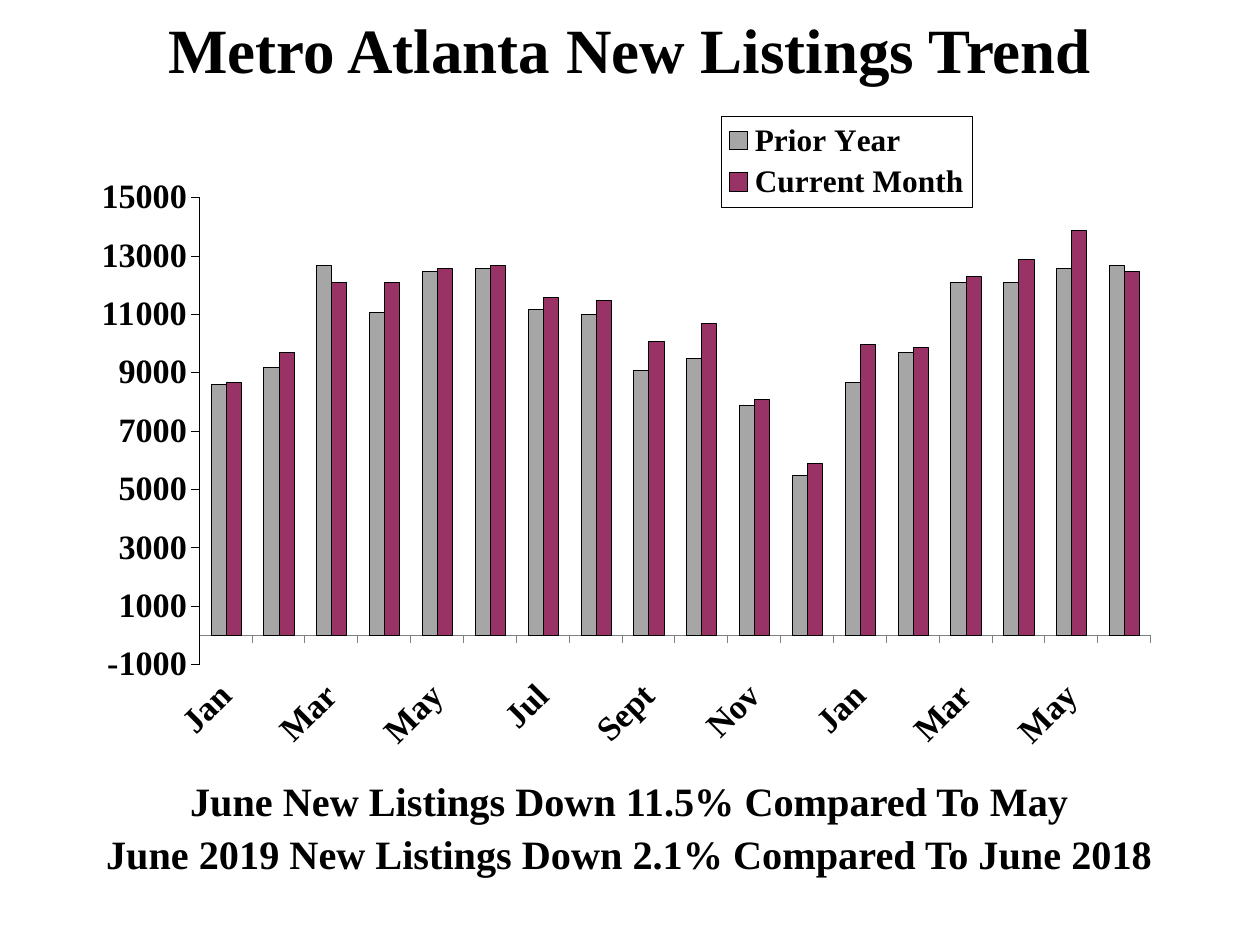
from pptx import Presentation
from pptx import util as u
from pptx.chart.data import CategoryChartData
from pptx.dml.color import RGBColor
from pptx.enum import chart as ch, text
from pptx.oxml import parse_xml
from pptx.oxml.ns import nsdecls, qn

FACE = "Times New Roman"


def style(font, size, color="000000"):
    font.name, font.size, font.bold = FACE, u.Pt(size), True
    font.color.rgb = RGBColor.from_string(color)


def layout(x, y, w, h, inner=False):
    """Manual chart layout, in fractions of the chart's size."""
    target = '<c:layoutTarget val="inner"/>' if inner else ""
    return parse_xml(
        f'<c:layout {nsdecls("c")}><c:manualLayout>{target}'
        '<c:xMode val="edge"/><c:yMode val="edge"/>'
        f'<c:x val="{x}"/><c:y val="{y}"/><c:w val="{w}"/><c:h val="{h}"/>'
        '</c:manualLayout></c:layout>')


prs = Presentation()
prs.slide_width, prs.slide_height = u.Cm(25.4), u.Cm(19.05)
slide = prs.slides.add_slide(prs.slide_layouts[5])

# Title
title = slide.shapes.title
title.left, title.top, title.width, title.height = u.Cm(0), u.Cm(0.43), u.Cm(25.4), u.Cm(1.07)
frame = title.text_frame
frame.text = "Metro Atlanta New Listings Trend"
frame.vertical_anchor = text.MSO_ANCHOR.MIDDLE
frame.paragraphs[0].alignment = text.PP_ALIGN.CENTER
style(frame.paragraphs[0].runs[0].font, 36)

# Chart
months = ["Jan", "Feb", "Mar", "Apr", "May", "Jun",
          "Jul", "Aug", "Sept", "Oct", "Nov", "Dec"]
rows = [
    ("Prior Year", "A6A6A6",
     [8600, 9200, 12700, 11100, 12500, 12600, 11200, 11000, 9100,
      9500, 7900, 5500, 8700, 9700, 12100, 12100, 12600, 12700]),
    ("Current Month", "993366",
     [8700, 9700, 12100, 12100, 12600, 12700, 11600, 11500, 10100,
      10700, 8100, 5900, 10000, 9900, 12300, 12900, 13900, 12500]),
]
data = CategoryChartData()
data.categories = months + months[:6]
for name, _, vals in rows:
    data.add_series(name, vals)
chart = slide.shapes.add_chart(
    ch.XL_CHART_TYPE.COLUMN_CLUSTERED,
    u.Cm(1.57), u.Cm(2.11), u.Cm(22.25), u.Cm(13.41), data).chart
chart.has_title = False
style(chart.font, 19.5)

plot = chart.plots[0]
plot.gap_width, plot.overlap, plot.vary_by_categories = 150, 0, False
for series, (_, color, _) in zip(plot.series, rows):
    series.invert_if_negative = False
    series.format.fill.solid()
    series.format.fill.fore_color.rgb = RGBColor.from_string(color)
    series.format.line.color.rgb = RGBColor.from_string("000000")
    series.format.line.width = u.Pt(0.03)

area = chart._chartSpace.chart.plotArea
for old in area.findall(qn("c:layout")):
    area.remove(old)
area.insert(0, layout(0.11, 0.14, 0.862, 0.702, inner=True))

# Axes
val, cat = chart.value_axis, chart.category_axis
val.minimum_scale, val.maximum_scale, val.major_unit = -1000, 15000, 2000
val.has_major_gridlines = False
for axis, color in ((val, "000000"), (cat, "808080")):
    axis.major_tick_mark = ch.XL_TICK_MARK.OUTSIDE
    axis.format.line.color.rgb = RGBColor.from_string(color)
    axis.format.line.width = u.Pt(0.01)
    style(axis.tick_labels.font, 19.5)
cat.tick_label_position = ch.XL_TICK_LABEL_POSITION.LOW
cat._element.find(qn("c:txPr")).find(qn("a:bodyPr")).set("rot", "-2700000")
for tag, step in (("tickLblSkip", 2), ("tickMarkSkip", 1)):
    skip = parse_xml(f'<c:{tag} {nsdecls("c")} val="{step}"/>')
    cat._element.find(qn("c:noMultiLvlLbl")).addprevious(skip)

# Legend
chart.has_legend = True
legend = chart.legend
legend.position = ch.XL_LEGEND_POSITION.RIGHT
legend.include_in_layout = False
style(legend.font, 17.9)
box = legend._element
for old in box.findall(qn("c:layout")):
    box.remove(old)
box.find(qn("c:legendPos")).addnext(layout(0.583, 0.017, 0.227, 0.137))
box.find(qn("c:txPr")).addprevious(parse_xml(
    f'<c:spPr {nsdecls("c", "a")}><a:solidFill><a:srgbClr val="FFFFFF"/></a:solidFill>'
    '<a:ln w="3175"><a:solidFill><a:srgbClr val="000000"/></a:solidFill></a:ln></c:spPr>'))

# Summary
note = slide.shapes.add_textbox(u.Cm(0), u.Cm(15.75), u.Cm(25.4), u.Cm(2.3)).text_frame
note.word_wrap = True
note.margin_top = note.margin_bottom = 0
note.text = ("June New Listings Down 11.5% Compared To May\n"
             "June 2019 New Listings Down 2.1% Compared To June 2018")
for i, para in enumerate(note.paragraphs):
    para.alignment = text.PP_ALIGN.CENTER
    para.line_spacing = 0.9
    para.space_before = u.Pt(6 if i else 0)
    style(para.runs[0].font, 23)

prs.save("out.pptx")
